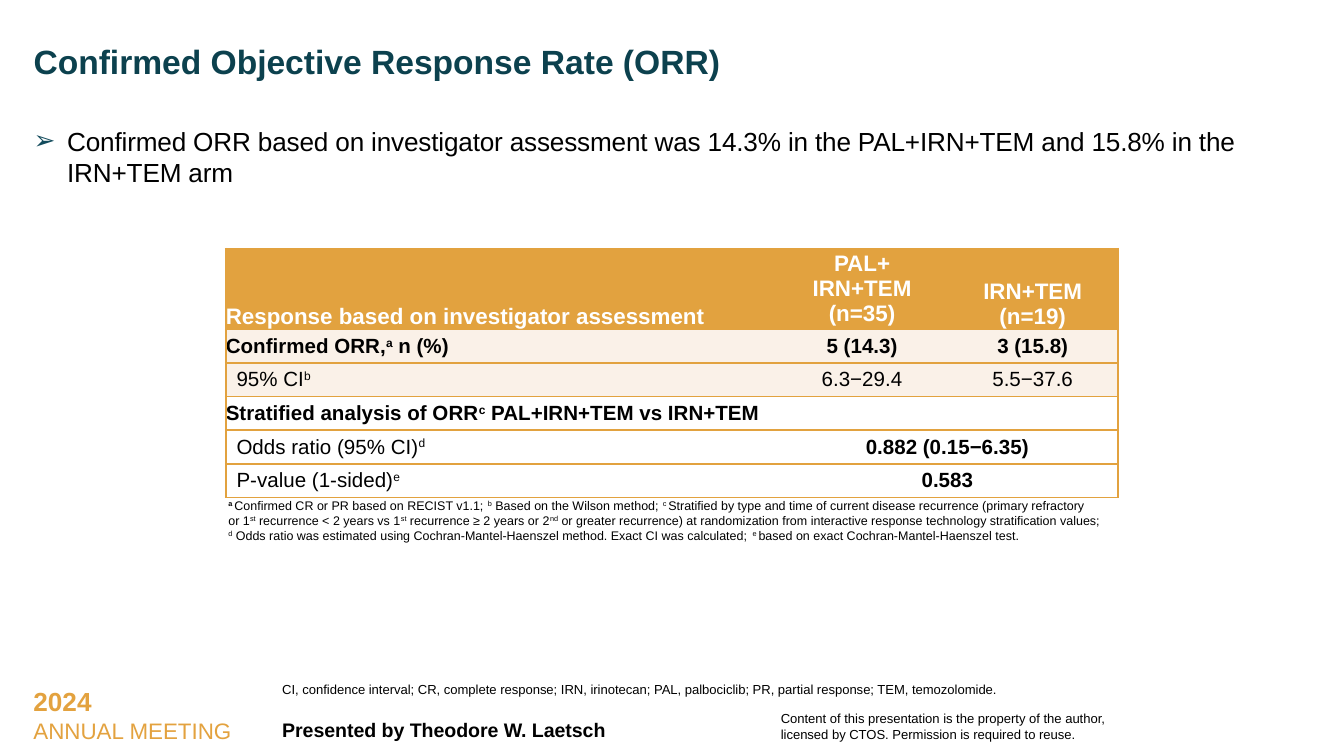
from lxml.etree import SubElement
from pptx import Presentation
from pptx.dml.color import RGBColor
from pptx.enum.text import MSO_ANCHOR as Anchor, PP_ALIGN as Align
from pptx.oxml.ns import qn
from pptx.util import Inches, Pt

GOLD = "E2A23F"
CREAM = "FAF1E8"
WHITE = "FFFFFF"
TEAL = "0C414E"
PLAIN_TABLE_STYLE = "{2D5ABB26-0587-4C30-8999-92F81FD0307C}"

ROWS = [
    ("Confirmed ORR,|a| n (%)", ["5 (14.3)", "3 (15.8)"], CREAM, True, True),
    ("95% CI|b", ["6.3−29.4", "5.5−37.6"], CREAM, False, False),
    ("Stratified analysis of ORR|c| PAL+IRN+TEM vs IRN+TEM", ["", ""], WHITE, True, True),
    ("Odds ratio (95% CI)|d", ["0.882 (0.15−6.35)"], WHITE, False, True),
    ("P-value (1-sided)|e", ["0.583"], WHITE, False, True),
]

FOOTNOTE = (
    "|a |Confirmed CR or PR based on RECIST v1.1; |b| Based on the Wilson method; "
    "|c |Stratified by type and time of current disease recurrence (primary refractory\n"
    "or 1|st| recurrence < 2 years vs 1|st| recurrence ≥ 2 years or 2|nd| or greater "
    "recurrence) at randomization from interactive response technology stratification values;\n"
    "|d| Odds ratio was estimated using Cochran-Mantel-Haenszel method. "
    "Exact CI was calculated; |e |based on exact Cochran-Mantel-Haenszel test."
)


def color(value):
    return RGBColor.from_string(value)


def write(paragraph, text, size=11, fill="000000", bold=False, align=Align.LEFT,
          line_spacing=None, tracking=None):
    paragraph.alignment = align
    if line_spacing:
        paragraph.line_spacing = line_spacing
    if not text:
        paragraph._p.get_or_add_endParaRPr().set("sz", str(int(size * 100)))
    for index, part in enumerate(text.split("|")):
        for line_index, line in enumerate(part.split("\n")):
            if line_index:
                paragraph.add_line_break()
            if not line:
                continue
            run = paragraph.add_run()
            run.text = line
            font = run.font
            font.name, font.size, font.bold = "Arial", Pt(size), bold
            font.color.rgb = color(fill)
            if index % 2:
                run._r.get_or_add_rPr().set("baseline", "30000")
            if tracking:
                run._r.get_or_add_rPr().set("spc", str(tracking))


def add_text_box(slide, box, inset=0, anchor=Anchor.TOP):
    frame = slide.shapes.add_textbox(*map(Inches, box)).text_frame
    frame.word_wrap = True
    frame.vertical_anchor = anchor
    frame.margin_left = frame.margin_right = Inches(inset)
    frame.margin_top = frame.margin_bottom = Inches(min(inset, 0.05))
    return frame


def add_title(slide, box):
    frame = add_text_box(slide, box)
    write(frame.paragraphs[0], "Confirmed Objective Response Rate (ORR)",
          size=18, fill=TEAL, bold=True, line_spacing=0.9)


def add_body(slide, box):
    paragraph = add_text_box(slide, box).paragraphs[0]
    properties = paragraph._p.get_or_add_pPr()
    properties.set("marL", str(Inches(0.25)))
    properties.set("indent", str(Inches(-0.25)))
    bullet_color = SubElement(properties, qn("a:buClr"))
    SubElement(bullet_color, qn("a:srgbClr"), val="124B5C")
    SubElement(properties, qn("a:buFont"), typeface="Arial")
    SubElement(properties, qn("a:buChar"), char="➢")
    write(paragraph, "Confirmed ORR based on investigator assessment was 14.3% in the "
          "PAL+IRN+TEM and 15.8% in the IRN+TEM arm",
          size=14, line_spacing=1.0, tracking=-10)


def add_border(cell, side):
    line = SubElement(cell._tc.get_or_add_tcPr(), qn(f"a:ln{side}"), w=str(Pt(1)))
    fill = SubElement(line, qn("a:solidFill"))
    SubElement(fill, qn("a:srgbClr"), val=GOLD)


def format_cell(cell, fill, sides, anchor=Anchor.MIDDLE, indent=0):
    for side in sides:
        add_border(cell, side)
    cell.fill.solid()
    cell.fill.fore_color.rgb = color(fill)
    cell.vertical_anchor = anchor
    cell.margin_left = Inches(indent)
    cell.margin_right = cell.margin_top = cell.margin_bottom = 0


def add_response_table(slide, box):
    table = slide.shapes.add_table(len(ROWS) + 1, 3, *map(Inches, box)).table
    table._tbl.tblPr.find(qn("a:tableStyleId")).text = PLAIN_TABLE_STYLE
    for column, width in zip(table.columns, (4.1, 1.27, 1.27)):
        column.width = Inches(width)
    for index, row in enumerate(table.rows):
        row.height = Inches(0.25 if index else 0.6)

    edges = ("LTB", "TB", "RTB")
    headings = ("Response based on investigator assessment",
                "PAL+\nIRN+TEM\n(n=35)", "IRN+TEM\n(n=19)")
    for column, heading in enumerate(headings):
        cell = table.cell(0, column)
        format_cell(cell, GOLD, edges[column],
                    anchor=Anchor.MIDDLE if column == 1 else Anchor.BOTTOM)
        write(cell.text_frame.paragraphs[0], heading, size=12, fill=WHITE, bold=True,
              align=Align.CENTER if column else Align.LEFT)

    for index, (label, values, fill, main, bold_values) in enumerate(ROWS, 1):
        merged = len(values) == 1
        for column in range(3):
            format_cell(table.cell(index, column), fill,
                        edges[2] if merged and column else edges[column],
                        indent=0 if main or column else 0.08)
        write(table.cell(index, 0).text_frame.paragraphs[0], label, bold=main)
        if merged:
            table.cell(index, 1).merge(table.cell(index, 2))
        for column, value in enumerate(values, 1):
            write(table.cell(index, column).text_frame.paragraphs[0], value,
                  bold=bold_values, align=Align.CENTER)


def add_notes_text(slide, footnote_box, abbreviation_box):
    footnote = add_text_box(slide, footnote_box, 0.02, Anchor.MIDDLE).paragraphs[0]
    write(footnote, FOOTNOTE, size=6.7)
    footnote.runs[0].font.bold = True
    abbreviations = add_text_box(slide, abbreviation_box, 0.02, Anchor.BOTTOM)
    write(abbreviations.paragraphs[0],
          "CI, confidence interval; CR, complete response; IRN, irinotecan; PAL, palbociclib; "
          "PR, partial response; TEM, temozolomide.", size=7, line_spacing=0.9)


def add_footer(slide, left, top):
    meeting = add_text_box(slide, (left, top, 1.69, 0.54), 0.1)
    write(meeting.paragraphs[0], "2024", size=14, fill="E3A23F", bold=True)
    write(meeting.add_paragraph(), "ANNUAL MEETING", size=12, fill="E3A23F")
    presenter = add_text_box(slide, (left + 1.89, top + 0.23, 3.55, 0.3), 0.06, Anchor.MIDDLE)
    write(presenter.paragraphs[0], "Presented by Theodore W. Laetsch", size=10.5, bold=True)
    rights = add_text_box(slide, (left + 5.6, top + 0.18, 2.56, 0.35), 0.06, Anchor.MIDDLE)
    write(rights.paragraphs[0], "Content of this presentation is the property of the author,", size=7)
    write(rights.add_paragraph(), "licensed by CTOS. Permission is required to reuse.", size=7)


def main():
    presentation = Presentation()
    presentation.slide_width = Inches(10)
    presentation.slide_height = Inches(10) * 9 // 16
    slide = presentation.slides.add_slide(presentation.slide_layouts[6])
    add_footer(slide, 0.15, 5.05)
    add_body(slide, (0.25, 0.93, 9.5, 3.87))
    add_notes_text(slide, (1.68, 3.68, 6.64, 0.38), (2.08, 5.06, 6.2, 0.15))
    add_response_table(slide, (1.68, 1.85, 6.64, 1.85))
    add_title(slide, (0.25, 0.34, 9.5, 0.46))
    presentation.save("out.pptx")


if __name__ == "__main__":
    main()
